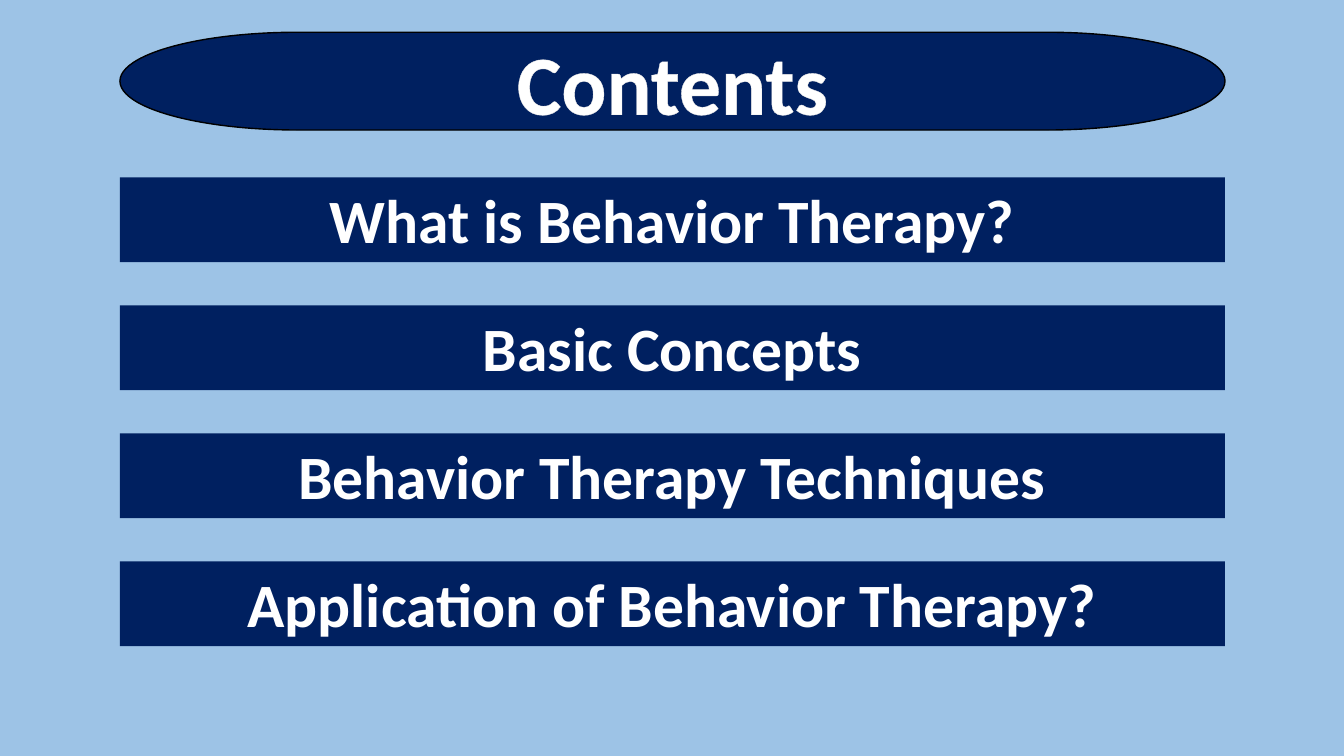
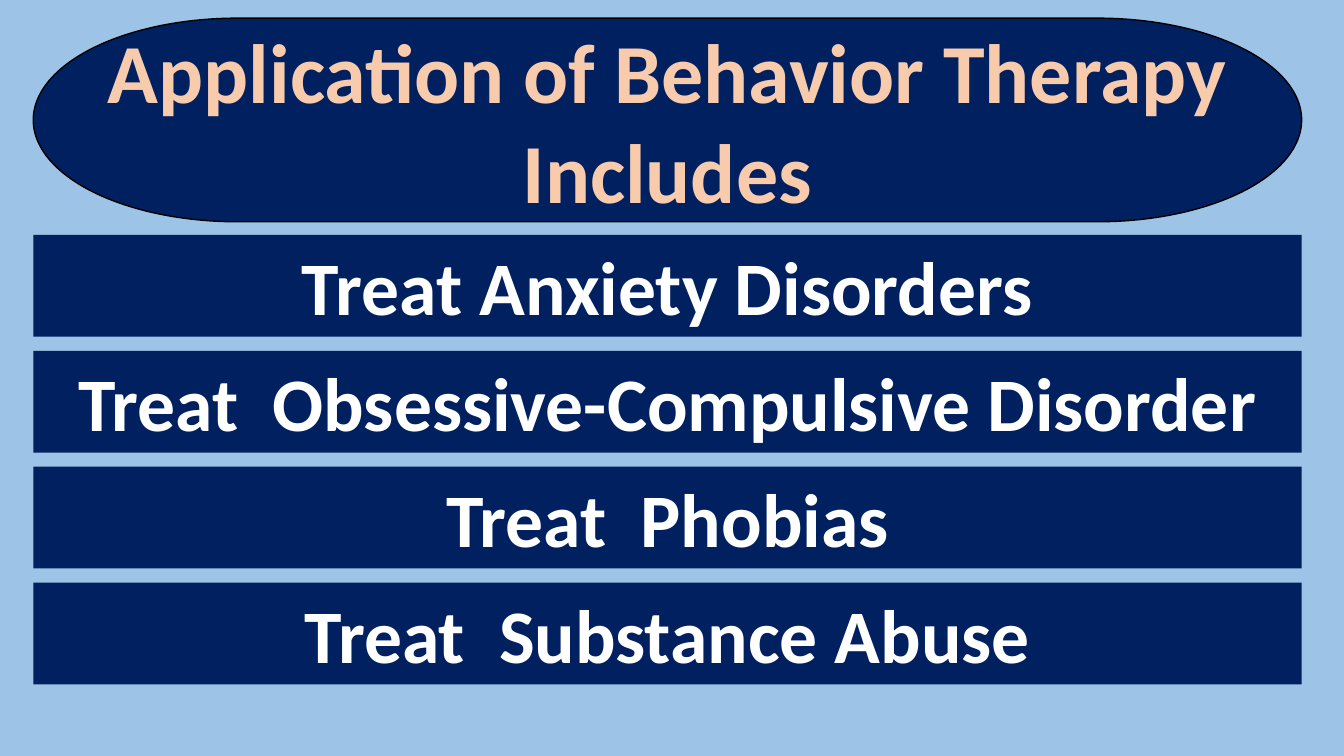
from pptx import Presentation
from pptx.dml.color import RGBColor
from pptx.enum.shapes import MSO_SHAPE
from pptx.enum.text import MSO_ANCHOR, MSO_AUTO_SIZE, PP_ALIGN
from pptx.oxml import parse_xml
from pptx.oxml.ns import nsdecls
from pptx.util import Inches, Pt

TERMINATOR = MSO_SHAPE.FLOWCHART_TERMINATOR
MIDDLE, TOP = MSO_ANCHOR.MIDDLE, MSO_ANCHOR.TOP
NO_FIT, GROW = MSO_AUTO_SIZE.NONE, MSO_AUTO_SIZE.SHAPE_TO_FIT_TEXT
CENTER = PP_ALIGN.CENTER

COLORS = {
    "sky": "9DC3E6",
    "navy": "002060",
    "white": "FFFFFF",
    "black": "000000",
    "gray": "E7E6E6",
    "peach": "F8CBAD",
    "orange": "ED7D31",
}
FONT = "Calibri"
TITLE_SIZE = 60
TITLE_INSET = 0.047  # share of the band's width taken by each rounded end

SLIDES = [
    {
        "title": "Contents",
        "title_color": "white",
        "outline": ("gray", 0.75),
        "band": (1.19, 0.32, 10.96, 0.97),
        "bars": (1.19, 1.76, 10.96, 0.84),
        "pitch": 1.27,
        "size": 44,
        "topics": [
            "What is Behavior Therapy?",
            "Basic Concepts",
            "Behavior Therapy Techniques",
            "Application of Behavior Therapy?",
        ],
    },
    {
        "title": "Application of Behavior Therapy Includes",
        "title_color": "peach",
        "outline": ("orange", 1.75),
        "band": (0.33, 0.18, 12.58, 2.02),
        "bars": (0.33, 2.33, 12.58, 1.01),
        "pitch": 1.15,
        "size": 54,
        "topics": [
            "Treat Anxiety Disorders",
            "Treat  Obsessive-Compulsive Disorder",
            "Treat  Phobias",
            "Treat  Substance Abuse",
        ],
    },
]


def color(name):
    return RGBColor.from_string(COLORS[name])


def paint(fill, name):
    fill.solid()
    fill.fore_color.rgb = color(name)


def write(frame, text, size, text_color, anchor, fit):
    """Set one bold, centred line of text and return its run."""
    frame.word_wrap = True
    frame.auto_size = fit
    frame.vertical_anchor = anchor
    paragraph = frame.paragraphs[0]
    paragraph.alignment = CENTER
    run = paragraph.add_run()
    run.text = text
    run.font.name = FONT
    run.font.size = Pt(size)
    run.font.bold = True
    run.font.color.rgb = color(text_color)
    return run


def outline_text(run, name, width):
    run.font._element.insert(0, parse_xml(
        f'<a:ln {nsdecls("a")} w="{Pt(width)}"><a:solidFill>'
        f'<a:srgbClr val="{COLORS[name]}"/></a:solidFill></a:ln>'))


def add_title_band(slide, box, text, text_color, outline):
    left, top, width, height = box
    band = slide.shapes.add_shape(TERMINATOR, *map(Inches, box))
    band.shadow.inherit = False
    paint(band.fill, "navy")
    band.line.color.rgb = color("black")
    band.line.width = Pt(1)

    # Title lies on the band, between its rounded ends
    title = slide.shapes.title
    inset = width * TITLE_INSET
    title.left, title.top = Inches(left + inset), Inches(top)
    title.width, title.height = Inches(width - 2 * inset), Inches(height)
    frame = title.text_frame
    frame.margin_top = frame.margin_bottom = 0
    run = write(frame, text, TITLE_SIZE, text_color, MIDDLE, NO_FIT)
    outline_text(run, *outline)
    band._element.addnext(title._element)


def add_topic_bars(slide, first_box, pitch, size, topics):
    left, top, width, height = first_box
    for row, topic in enumerate(topics):
        bar = slide.shapes.add_textbox(
            Inches(left), Inches(top + row * pitch), Inches(width), Inches(height))
        paint(bar.fill, "navy")
        write(bar.text_frame, topic, size, "white", TOP, GROW)


def add_topic_slide(prs, content):
    slide = prs.slides.add_slide(prs.slide_layouts.get_by_name("Title Only"))
    add_title_band(slide, content["band"], content["title"],
                   content["title_color"], content["outline"])
    add_topic_bars(slide, content["bars"], content["pitch"],
                   content["size"], content["topics"])


def main():
    prs = Presentation()
    prs.slide_width, prs.slide_height = Inches(13.33), Inches(7.5)
    paint(prs.slide_master.background.fill, "sky")
    for content in SLIDES:
        add_topic_slide(prs, content)
    prs.save("out.pptx")


if __name__ == "__main__":
    main()
